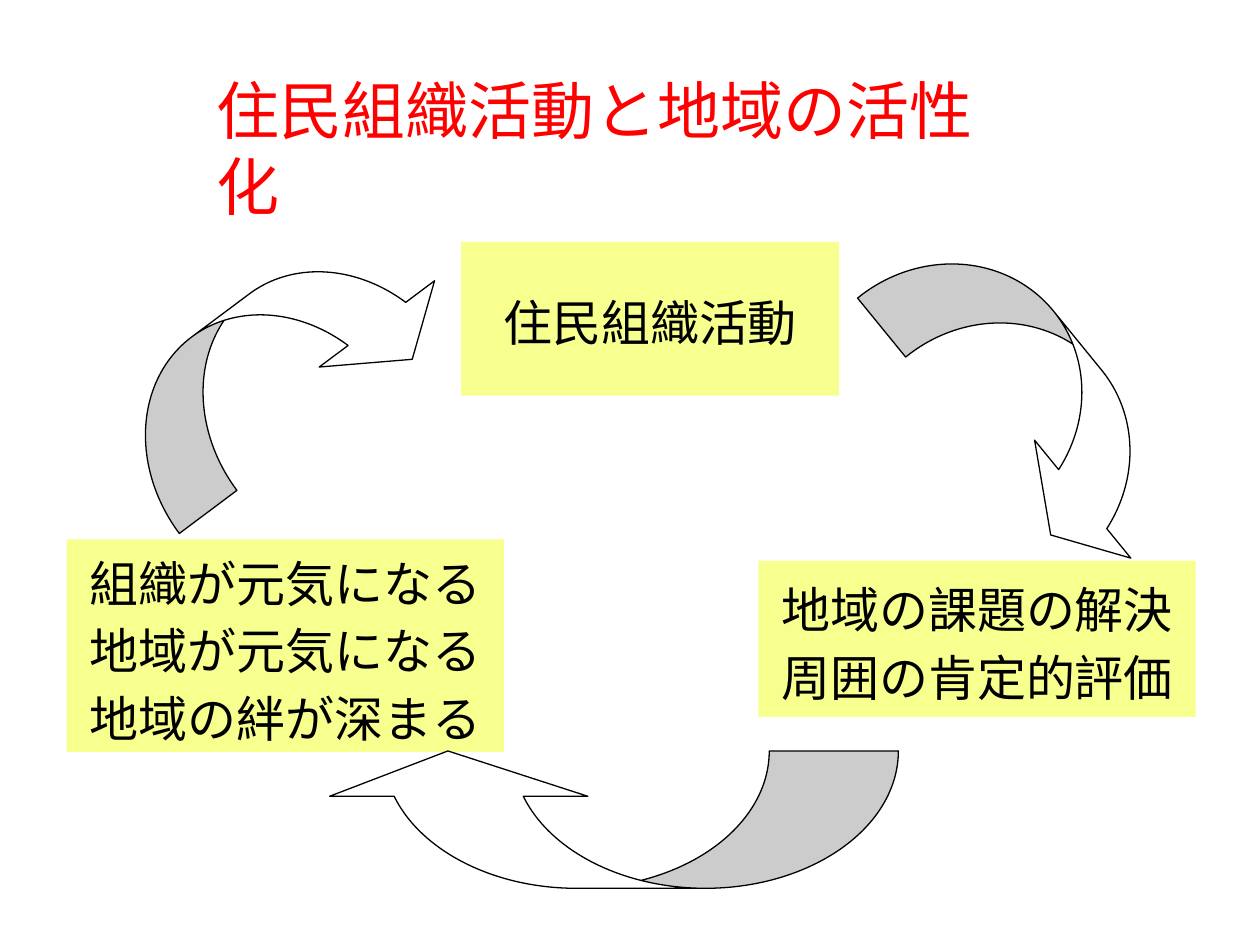
from dataclasses import dataclass

from pptx import Presentation
from pptx.dml.color import RGBColor
from pptx.enum.shapes import MSO_SHAPE
from pptx.enum.text import MSO_ANCHOR, MSO_AUTO_SIZE, PP_ALIGN
from pptx.util import Inches, Pt

RECTANGLE = MSO_SHAPE.RECTANGLE
CURVED_ARROW = MSO_SHAPE.CURVED_DOWN_ARROW
TOP, MIDDLE = MSO_ANCHOR.TOP, MSO_ANCHOR.MIDDLE
LEFT, CENTER = PP_ALIGN.LEFT, PP_ALIGN.CENTER
NO_AUTOFIT = MSO_AUTO_SIZE.NONE

COLORS = {"title": "FF0000", "text": "000000", "box": "F7FF8F",
          "arrow": "FFFFFF", "outline": "000000"}
SERIF, GOTHIC = "Times New Roman", "Noto Sans CJK JP"
TITLE_ONLY = 5

# The slide is a grid of 100 columns by 75 rows
SLIDE_WIDTH, SLIDE_HEIGHT = Inches(10), Inches(7.5)
COLUMN, ROW = SLIDE_WIDTH / 100, SLIDE_HEIGHT / 75


@dataclass
class Area:
    column: float
    row: float
    columns: float
    rows: float

    def lengths(self) -> tuple:
        return (round(self.column * COLUMN), round(self.row * ROW),
                round(self.columns * COLUMN), round(self.rows * ROW))


@dataclass
class Stage:
    area: Area
    paragraphs: list
    font: str
    spacing: float


@dataclass
class CycleArrow:
    area: Area
    rotation: float
    thickness: float  # the head is twice as wide as the band


TITLE_AREA = Area(16.2, 5.2, 66.5, 7.1)
STAGES = [
    Stage(Area(36.6, 19.2, 30, 12.2), ["住民組織活動"], SERIF, 1.1),
    Stage(Area(5.3, 42.8, 34.7, 16.9),
          ["組織が元気になる地域が元気になる", "地域の絆が深まる"], GOTHIC, 1.15),
    Stage(Area(60.2, 44.5, 34.7, 12.4),
          ["地域の課題の解決周囲の肯定的評価"], GOTHIC, 1.15),
]
ARROWS = [
    CycleArrow(Area(66.9, 26.1, 30.3, 11.4), 50.8, 0.53),
    CycleArrow(Area(25.3, 59.6, 46, 10.9), 180, 0.94),
    CycleArrow(Area(7.8, 23, 28.8, 11.9), 323.2, 0.48),
]


def color(name: str) -> RGBColor:
    return RGBColor.from_string(COLORS[name])


def style_paragraph(paragraph, font: str, size: int, color_name: str, align) -> None:
    paragraph.alignment = align
    paragraph.font.name = font
    paragraph.font.size = Pt(size)
    paragraph.font.color.rgb = color(color_name)


def add_filled_shape(page, kind, area: Area, fill: str):
    shape = page.shapes.add_shape(kind, *area.lengths())
    shape.shadow.inherit = False
    shape.fill.solid()
    shape.fill.fore_color.rgb = color(fill)
    return shape


def add_stage(page, stage: Stage) -> None:
    box = add_filled_shape(page, RECTANGLE, stage.area, "box")
    box.line.fill.background()
    frame = box.text_frame
    frame.word_wrap = True
    frame.vertical_anchor = MIDDLE
    frame.margin_left = frame.margin_right = Inches(0.08)
    frame.margin_top = frame.margin_bottom = Inches(0.01)
    frame.text = "\n".join(stage.paragraphs)
    for paragraph in frame.paragraphs:
        style_paragraph(paragraph, stage.font, 28, "text", CENTER)
        paragraph.line_spacing = stage.spacing


def add_cycle_arrow(page, arrow: CycleArrow) -> None:
    shape = add_filled_shape(page, CURVED_ARROW, arrow.area, "arrow")
    shape.line.color.rgb = color("outline")
    shape.line.width = Pt(0.75)
    shape.rotation = arrow.rotation
    for index, value in enumerate((arrow.thickness, 2 * arrow.thickness, 0.33)):
        shape.adjustments[index] = value


def set_title(page, text: str) -> None:
    title = page.shapes.title
    title.left, title.top, title.width, title.height = TITLE_AREA.lengths()
    frame = title.text_frame
    frame.text = text
    frame.word_wrap = True
    frame.auto_size = NO_AUTOFIT
    frame.vertical_anchor = TOP
    style_paragraph(frame.paragraphs[0], SERIF, 36, "title", LEFT)


def main() -> None:
    deck = Presentation()
    deck.slide_width, deck.slide_height = SLIDE_WIDTH, SLIDE_HEIGHT
    page = deck.slides.add_slide(deck.slide_layouts[TITLE_ONLY])

    # Heading
    set_title(page, "住民組織活動と地域の活性化")

    # Stages of the cycle
    for stage in STAGES:
        add_stage(page, stage)

    # Arrows from each stage to the next
    for arrow in ARROWS:
        add_cycle_arrow(page, arrow)

    deck.save("out.pptx")


if __name__ == "__main__":
    main()
